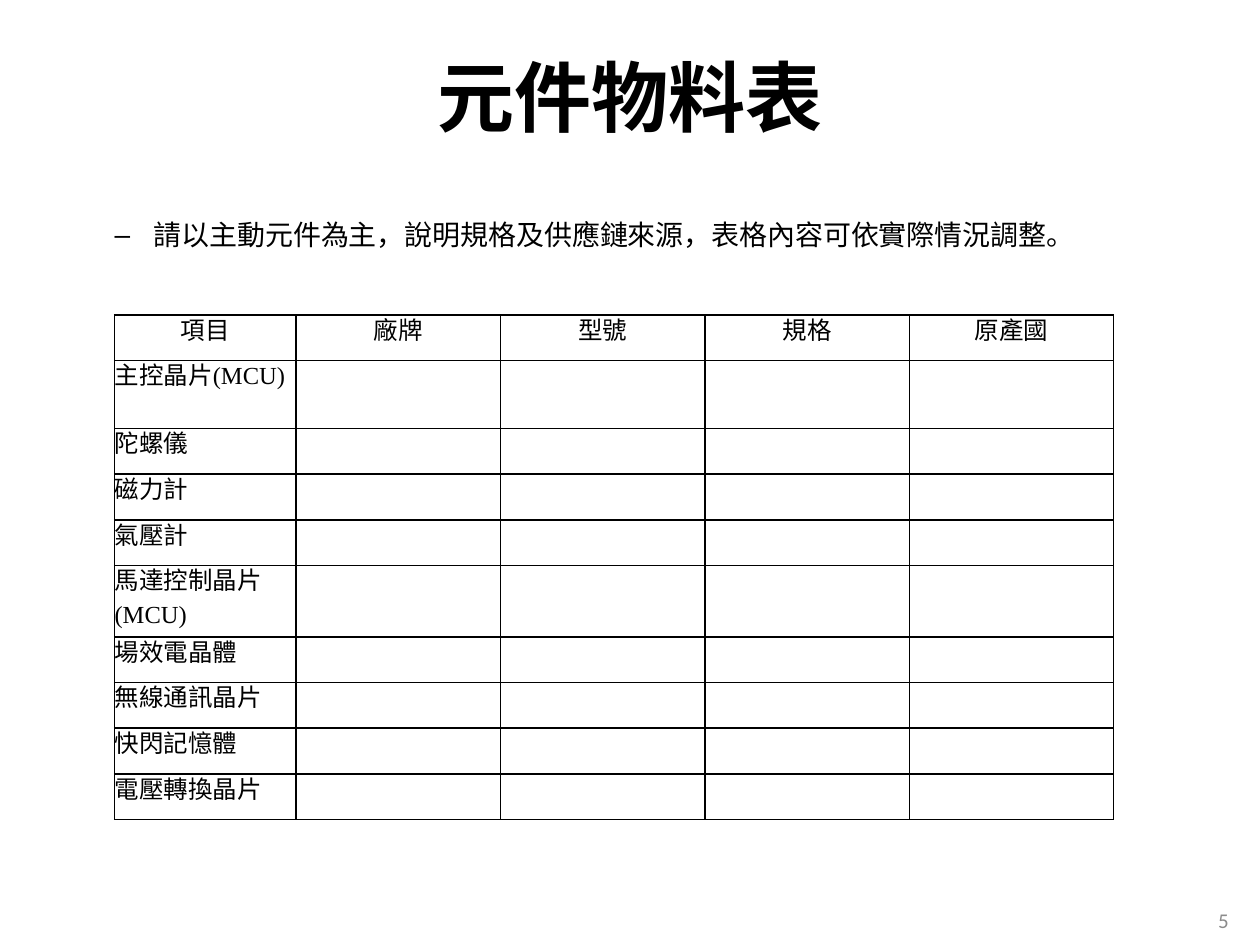
from lxml.etree import SubElement
from pptx import Presentation
from pptx.dml.color import RGBColor
from pptx.enum.text import MSO_ANCHOR, PP_ALIGN
from pptx.oxml import parse_xml
from pptx.oxml.ns import nsdecls, qn
from pptx.util import Cm, Pt

BLACK = RGBColor(0x00, 0x00, 0x00)
WHITE = RGBColor(0xFF, 0xFF, 0xFF)
GREY = RGBColor(0x8C, 0x8C, 0x8C)
SERIF = "Times New Roman"

HEADERS = ["項目", "廠牌", "型號", "規格", "原產國"]
MOTOR_CONTROLLER = "馬達控制晶片(MCU)"
COMPONENTS = [
    "主控晶片(MCU)", "陀螺儀", "磁力計", "氣壓計", MOTOR_CONTROLLER,
    "場效電晶體", "無線通訊晶片", "快閃記憶體", "電壓轉換晶片",
]
COLUMN_WIDTHS = [3.66] + [4.12] * 4
ROW_HEIGHT = 0.92
TALL_ROWS = {1: 1.37, 5: 1.44}


def add_run(paragraph, text, size, font=SERIF, color=BLACK, bold=False):
    run = paragraph.add_run()
    run.text = text
    run.font.size = Pt(size)
    run.font.name = font
    run.font.color.rgb = color
    run.font.bold = bold


def add_text_box(slide, left, top, width, height, anchor=MSO_ANCHOR.TOP):
    """Add a wrapping text box and return its first paragraph."""
    box = slide.shapes.add_textbox(Cm(left), Cm(top), Cm(width), Cm(height))
    box.text_frame.word_wrap = True
    box.text_frame.vertical_anchor = anchor
    return box.text_frame.paragraphs[0]


def add_title(slide, left, top, width, height):
    paragraph = add_text_box(slide, left, top, width, height, MSO_ANCHOR.MIDDLE)
    paragraph.alignment = PP_ALIGN.CENTER
    add_run(paragraph, "元件物料表", 44, bold=True)


def add_instruction(slide, left, top, width, height):
    paragraph = add_text_box(slide, left, top, width, height)
    # Dash bullet with a hanging indent
    properties = paragraph._p.get_or_add_pPr()
    properties.set("marL", str(Cm(2.06)))
    properties.set("indent", str(Cm(-0.79)))
    SubElement(properties, qn("a:buFont"), typeface="Arial")
    SubElement(properties, qn("a:buChar"), char="–")
    add_run(paragraph, "請以主動元件為主，說明規格及供應鏈來源，表格內容可依實際情況調整。", 16)


def style_cell(cell):
    """Give a cell no margins, a white fill and thin black borders."""
    cell.margin_left = cell.margin_right = cell.margin_top = cell.margin_bottom = 0
    cell.fill.solid()
    cell.fill.fore_color.rgb = WHITE
    properties = cell._tc.get_or_add_tcPr()
    for position, side in enumerate(("lnL", "lnR", "lnT", "lnB")):
        border = parse_xml(
            f'<a:{side} {nsdecls("a")} w="{Pt(1)}"><a:solidFill>'
            f'<a:srgbClr val="{BLACK}"/></a:solidFill></a:{side}>'
        )
        properties.insert(position, border)


def fill_cell(cell, text, alignment):
    paragraph = cell.text_frame.paragraphs[0]
    paragraph.alignment = alignment
    paragraph.line_spacing = Pt(18)
    add_run(paragraph, text, 14)


def add_component_table(slide, left, top):
    row_heights = [TALL_ROWS.get(i, ROW_HEIGHT) for i in range(len(COMPONENTS) + 1)]
    table = slide.shapes.add_table(
        len(row_heights), len(HEADERS), Cm(left), Cm(top),
        Cm(sum(COLUMN_WIDTHS)), Cm(sum(row_heights)),
    ).table
    table.first_row = table.horz_banding = False
    for column, width in zip(table.columns, COLUMN_WIDTHS):
        column.width = Cm(width)
    for row, height in zip(table.rows, row_heights):
        row.height = Cm(height)
    for cell in table.iter_cells():
        style_cell(cell)

    # Header row, then component names in the first column
    for column, header in enumerate(HEADERS):
        fill_cell(table.cell(0, column), header, PP_ALIGN.CENTER)
    for row, component in enumerate(COMPONENTS, start=1):
        is_motor = component == MOTOR_CONTROLLER
        alignment = PP_ALIGN.LEFT if is_motor else PP_ALIGN.JUSTIFY
        fill_cell(table.cell(row, 0), component, alignment)


def add_page_number(slide, left, top, width, height):
    paragraph = add_text_box(slide, left, top, width, height, MSO_ANCHOR.MIDDLE)
    paragraph.alignment = PP_ALIGN.RIGHT
    add_run(paragraph, "5", 12, font="Calibri", color=GREY)


def main():
    presentation = Presentation()
    presentation.slide_width = Cm(25.4)
    presentation.slide_height = Cm(19.05)
    slide = presentation.slides.add_slide(presentation.slide_layouts[6])

    add_title(slide, 1.27, 0.76, 22.86, 2.36)
    add_instruction(slide, 0.79, 4.27, 21.67, 0.94)
    add_component_table(slide, 2.31, 6.35)
    add_page_number(slide, 19.1, 18.03, 5.92, 1.02)

    presentation.save("out.pptx")


if __name__ == "__main__":
    main()
